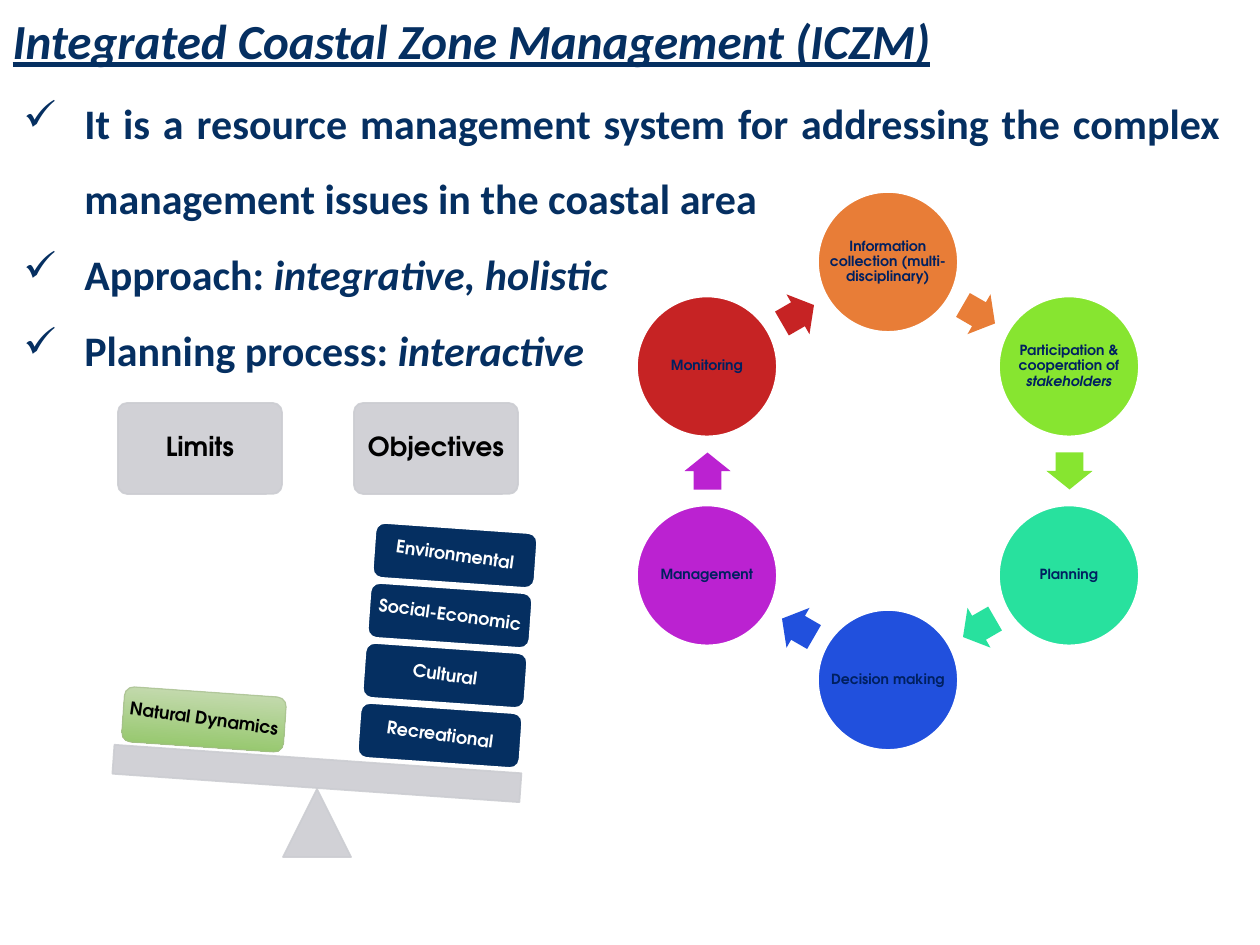
from math import cos, radians, sin
from lxml.etree import SubElement
from pptx import Presentation
from pptx.dml.color import RGBColor
from pptx.enum.shapes import MSO_SHAPE
from pptx.enum.text import MSO_ANCHOR, MSO_AUTO_SIZE, PP_ALIGN
from pptx.oxml.ns import qn
from pptx.util import Emu, Pt

PX = 914400 / 126
COLORS = {
    "navy": "052F61", "ink": "002060", "white": "FFFFFF", "black": "000000",
    "grey": "CCCDD2", "orange": "E87D37", "lime": "87E530", "mint": "28E19E",
    "blue": "2150DD", "purple": "BB22D1", "red": "C62324",
    "green_top": "CCDDBA", "green_bottom": "8FC563", "green_line": "A4BB8B",
}
COLORS = {name: RGBColor.from_string(value) for name, value in COLORS.items()}

prs = Presentation()
prs.slide_width, prs.slide_height = Emu(round(1260 * PX)), Emu(round(945 * PX))
s = prs.slides.add_slide(prs.slide_layouts[5])


def add_shape(kind, box, fill, line=None, rotation=0, adj=(), alpha=None):
    sp = s.shapes.add_shape(kind, *[Emu(round(v * PX)) for v in box])
    sp.shadow.inherit = False
    sp.rotation = rotation
    for i, value in enumerate(adj):
        sp.adjustments[i] = value
    sp.fill.solid()
    sp.fill.fore_color.rgb = COLORS[fill]
    if line:
        sp.line.color.rgb = COLORS[line]
        sp.line.width = Pt(1)
    else:
        sp.line.fill.background()
    if alpha:
        for color in sp._element.spPr.iter(qn("a:srgbClr")):
            SubElement(color, qn("a:alpha"), val=str(alpha * 1000))
    return sp


def add_label(box, runs, size, color, inset, rotation=0):
    sp = s.shapes.add_textbox(*[Emu(round(v * PX)) for v in box])
    sp.rotation = rotation
    tf = sp.text_frame
    tf.word_wrap = True
    tf.vertical_anchor = MSO_ANCHOR.MIDDLE
    tf.margin_left = tf.margin_right = Emu(round(inset * PX))
    tf.margin_top = tf.margin_bottom = Emu(round(inset * PX))
    p = tf.paragraphs[0]
    p.alignment = PP_ALIGN.CENTER
    p.line_spacing = 0.9
    for i, text in enumerate(runs):
        r = p.add_run()
        r.text = text
        r.font.name = "TeX Gyre Adventor"
        r.font.size = Pt(size)
        r.font.bold = True
        r.font.italic = i == 1
        r.font.color.rgb = COLORS[color]


title = s.shapes.title
title.left, title.top = Emu(0), Emu(round(4 * PX))
title.width, title.height = Emu(round(955 * PX)), Emu(round(72 * PX))
tf = title.text_frame
tf.text = "Integrated Coastal Zone Management (ICZM)"
tf.auto_size = MSO_AUTO_SIZE.NONE
tf.vertical_anchor = MSO_ANCHOR.TOP
p = tf.paragraphs[0]
p.alignment = PP_ALIGN.LEFT
font = p.runs[0].font
font.name, font.size = "Calibri", Pt(28)
font.bold = font.italic = font.underline = True
font.color.rgb = COLORS["navy"]

points = [
    ("It is a resource management system for addressing the complex "
     "management issues in the coastal area",),
    ("Approach: ", "integrative, holistic"),
    ("Planning process: ", "interactive"),
]
sp = s.shapes.add_textbox(*[Emu(round(v * PX)) for v in (11, 66, 1222, 318)])
tf = sp.text_frame
tf.word_wrap = True
for i, runs in enumerate(points):
    p = tf.paragraphs[0] if i == 0 else tf.add_paragraph()
    p.alignment = PP_ALIGN.JUSTIFY
    p.line_spacing = 1.5
    pPr = p._p.get_or_add_pPr()
    pPr.set("marL", str(round(61 * PX)))
    pPr.set("indent", str(round(-61 * PX)))
    SubElement(pPr, qn("a:buChar"), char="✓")
    for j, text in enumerate(runs):
        r = p.add_run()
        r.text = text
        r.font.name, r.font.size = "Calibri", Pt(24)
        r.font.bold = True
        r.font.italic = j == 1
        r.font.color.rgb = COLORS["navy"]

cycle = [
    (("Information collection (multi-disciplinary)",), "orange"),
    (("Participation & cooperation of ", "stakeholders"), "lime"),
    (("Planning",), "mint"),
    (("Decision making",), "blue"),
    (("Management",), "purple"),
    (("Monitoring",), "red"),
]
CX, CY, RING, ARROW_RING, D = 888, 471, 209, 181, 140
for i, (runs, color) in enumerate(cycle):
    angle = radians(60 * i - 90)
    box = (CX + RING * cos(angle) - D / 2, CY + RING * sin(angle) - D / 2, D, D)
    add_shape(MSO_SHAPE.OVAL, box, color, "white")
    add_label(box, runs, 8, "ink", 1)
    angle = radians(60 * i - 60)
    box = (CX + ARROW_RING * cos(angle) - 18, CY + ARROW_RING * sin(angle) - 23, 37, 46)
    add_shape(MSO_SHAPE.RIGHT_ARROW, box, color, rotation=30 + 60 * i, adj=(0.6, 0.5))

for x, text in ((118, "Limits"), (354, "Objectives")):
    box = (x, 403, 164, 91)
    add_shape(MSO_SHAPE.ROUNDED_RECTANGLE, box, "grey", "grey", adj=(0.1,), alpha=90)
    add_label(box, (text,), 15, "black", 7)

add_shape(MSO_SHAPE.ISOSCELES_TRIANGLE, (283, 789, 68, 68), "grey", "grey", alpha=90)
add_shape(MSO_SHAPE.RECTANGLE, (113, 759, 408, 29), "grey", "grey", rotation=4, alpha=90)

objectives = ["Recreational", "Cultural", "Social-Economic", "Environmental"]
for i, text in enumerate(objectives):
    box = (359 + 5 * i, 708 - 60 * i, 162, 55)
    add_shape(MSO_SHAPE.ROUNDED_RECTANGLE, box, "navy", "white", rotation=4)
    add_label(box, (text,), 10, "white", 5, rotation=8)

box = (123, 692, 162, 55)
sp = add_shape(MSO_SHAPE.ROUNDED_RECTANGLE, box, "green_top", "green_line", rotation=4, alpha=60)
sp.line.width = Pt(0.75)
sp.fill.gradient()
sp.fill.gradient_angle = 270
for stop, color in zip(sp.fill.gradient_stops, ("green_top", "green_bottom")):
    stop.color.rgb = COLORS[color]
add_label(box, ("Natural Dynamics",), 10, "black", 5, rotation=8)

prs.save("out.pptx")
